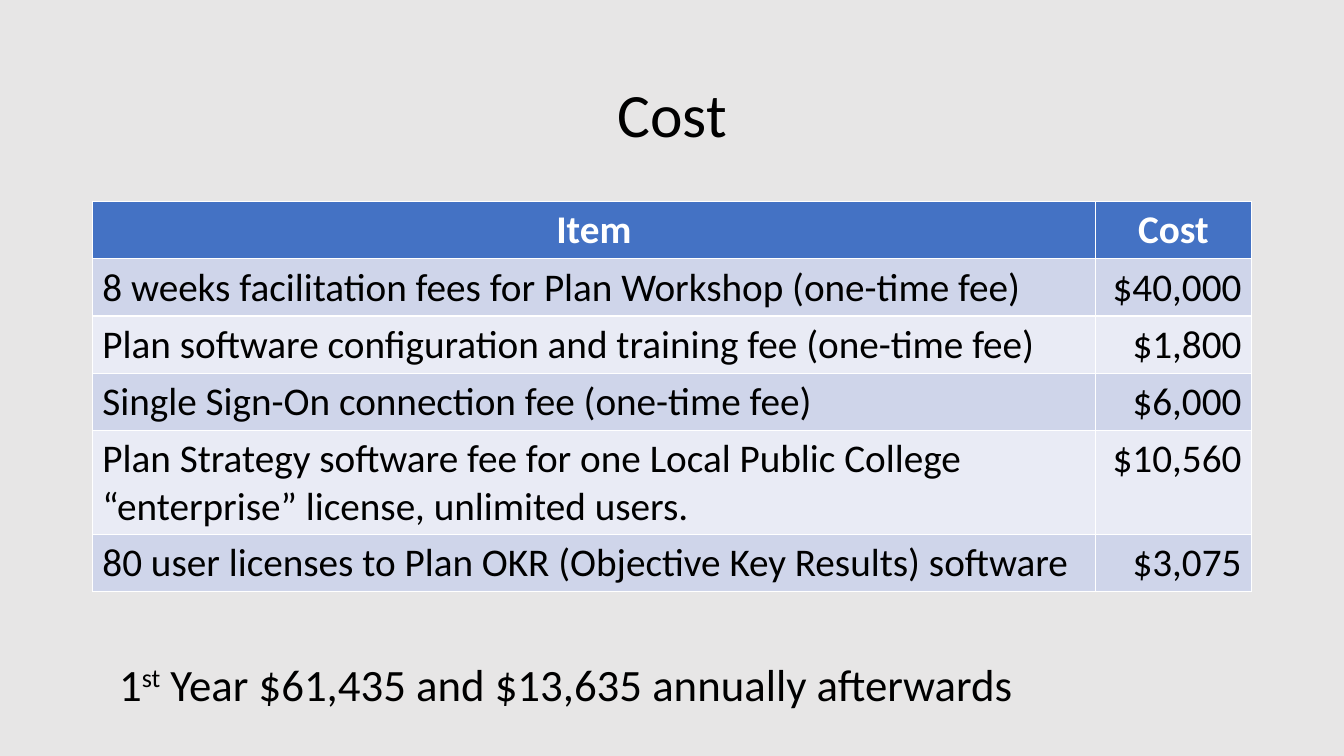
from dataclasses import dataclass
from typing import NamedTuple

from pptx import Presentation
from pptx.dml.color import RGBColor
from pptx.enum.text import MSO_ANCHOR, PP_ALIGN
from pptx.slide import Slide
from pptx.text.text import _Paragraph as Paragraph
from pptx.util import Emu, Inches, Pt


@dataclass(frozen=True)
class Theme:
    """Colours, font and type sizes of the slide."""
    background: str = "E7E6E6"
    header: str = "4472C4"
    bands: tuple[str, str] = ("CFD5EA", "E9EBF5")
    ink: str = "000000"
    header_ink: str = "FFFFFF"
    font: str = "Calibri"
    title_size: int = 44
    table_size: int = 28
    total_size: int = 32


class Area(NamedTuple):
    """A block of grid columns and rows."""
    column: float
    row: float
    columns: float
    rows: float


class CostLine(NamedTuple):
    """One item and its cost."""
    item: str
    cost: str


class Fragment(NamedTuple):
    """A piece of a line, raised by a percentage."""
    text: str
    raised: int = 0


THEME = Theme()
GRID_COLUMNS, GRID_ROWS = 160, 90
SLIDE_WIDTH, SLIDE_HEIGHT = Inches(13.333), Inches(7.5)
TITLE_AREA = Area(16, 7.1, 128, 13.7)
TABLE_AREA = Area(11, 24, 138, 29.6)
TOTAL_AREA = Area(13, 77.5, 134, 7.7)
COLUMN_SPANS = (119.4, 18.6)

HEADINGS = CostLine("Item", "Cost")
COST_LINES = [
    CostLine("8 weeks facilitation fees for Plan Workshop (one-time fee)", "$40,000"),
    CostLine("Plan software configuration and training fee (one-time fee)", "$1,800"),
    CostLine("Single Sign-On connection fee (one-time fee)", "$6,000"),
    CostLine("Plan Strategy software fee for one Local Public College "
             "“enterprise” license, unlimited users.", "$10,560"),
    CostLine("80 user licenses to Plan OKR (Objective Key Results) software", "$3,075"),
]
TOTAL = [Fragment("1"), Fragment("st", 30),
         Fragment(" Year $61,435 and $13,635 annually afterwards")]


def across(columns: float) -> Emu:
    """Convert grid columns to a length."""
    return Emu(round(SLIDE_WIDTH * columns / GRID_COLUMNS))


def down(rows: float) -> Emu:
    """Convert grid rows to a length."""
    return Emu(round(SLIDE_HEIGHT * rows / GRID_ROWS))


def place(area: Area) -> tuple[Emu, Emu, Emu, Emu]:
    """Convert an area to left, top, width and height."""
    return across(area.column), down(area.row), across(area.columns), down(area.rows)


def format_runs(paragraph: Paragraph, size: int, color: str, bold: bool = False) -> None:
    """Apply the theme font to every run of a paragraph."""
    for run in paragraph.runs:
        run.font.name = THEME.font
        run.font.size = Pt(size)
        run.font.bold = bold
        run.font.color.rgb = RGBColor.from_string(color)


def add_line(slide: Slide, area: Area, fragments: list[Fragment], size: int) -> Paragraph:
    """Add a text box holding one line of fragments."""
    text_frame = slide.shapes.add_textbox(*place(area)).text_frame
    text_frame.word_wrap = True
    text_frame.vertical_anchor = MSO_ANCHOR.MIDDLE
    paragraph = text_frame.paragraphs[0]
    for fragment in fragments:
        run = paragraph.add_run()
        run.text = fragment.text
        if fragment.raised:
            run.font._element.set("baseline", str(fragment.raised * 1000))
    format_runs(paragraph, size, THEME.ink)
    return paragraph


def add_cost_table(slide: Slide, area: Area) -> None:
    """Add the banded table of items and costs."""
    lines = [HEADINGS, *COST_LINES]
    table = slide.shapes.add_table(len(lines), len(COLUMN_SPANS), *place(area)).table
    for column, span in zip(table.columns, COLUMN_SPANS):
        column.width = across(span)
    for row_index, line in enumerate(lines):
        is_header = row_index == 0
        fill = THEME.header if is_header else THEME.bands[(row_index - 1) % 2]
        ink = THEME.header_ink if is_header else THEME.ink
        alignments = (PP_ALIGN.CENTER,) * 2 if is_header else (PP_ALIGN.LEFT, PP_ALIGN.RIGHT)
        for cell, text, alignment in zip(table.rows[row_index].cells, line, alignments):
            cell.fill.solid()
            cell.fill.fore_color.rgb = RGBColor.from_string(fill)
            cell.text_frame.text = text
            paragraph = cell.text_frame.paragraphs[0]
            paragraph.alignment = alignment
            format_runs(paragraph, THEME.table_size, ink, is_header)


def main() -> None:
    """Build the cost slide and save it."""
    presentation = Presentation()
    presentation.slide_width, presentation.slide_height = SLIDE_WIDTH, SLIDE_HEIGHT
    slide = presentation.slides.add_slide(presentation.slide_layouts[6])
    slide.background.fill.solid()
    slide.background.fill.fore_color.rgb = RGBColor.from_string(THEME.background)
    title = add_line(slide, TITLE_AREA, [Fragment("Cost")], THEME.title_size)
    title.alignment = PP_ALIGN.CENTER
    title.line_spacing = 0.9
    add_cost_table(slide, TABLE_AREA)
    add_line(slide, TOTAL_AREA, TOTAL, THEME.total_size)
    presentation.save("out.pptx")


if __name__ == "__main__":
    main()
